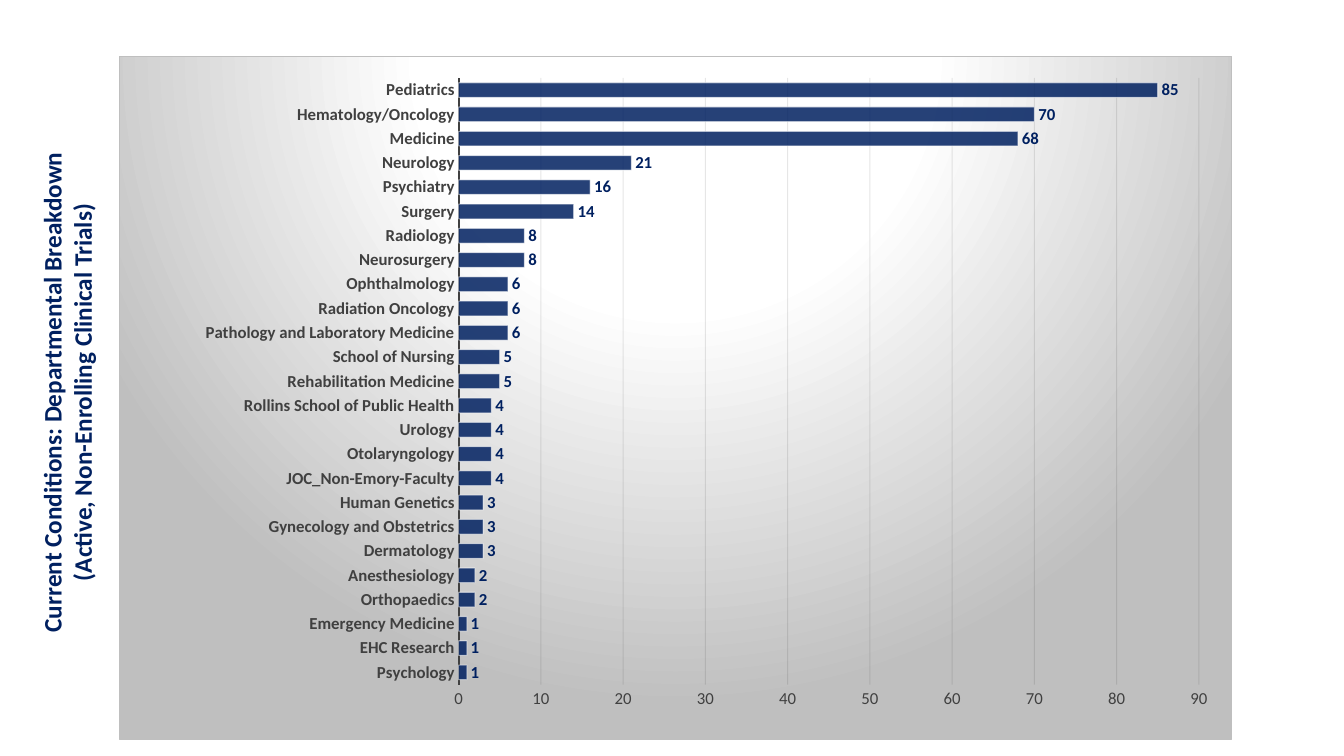
from lxml.etree import SubElement
from pptx import Presentation
from pptx.chart.data import CategoryChartData
from pptx.dml.color import RGBColor
from pptx.enum.chart import XL_CHART_TYPE, XL_LABEL_POSITION, XL_TICK_MARK
from pptx.enum.text import MSO_ANCHOR, MSO_AUTO_SIZE, PP_ALIGN
from pptx.oxml import parse_xml
from pptx.oxml.ns import nsdecls, qn
from pptx.util import Cm, Pt

NAVY = RGBColor(0x00, 0x20, 0x60)
GREY = RGBColor(0x40, 0x40, 0x40)
INK = RGBColor(0x0D, 0x0D, 0x0D)
WHITE = RGBColor(0xFF, 0xFF, 0xFF)
BLACK = RGBColor(0x00, 0x00, 0x00)
SILVER = RGBColor(0xBF, 0xBF, 0xBF)

TITLE = ("Current Conditions: Departmental Breakdown",
         "(Active, Non-Enrolling Clinical Trials)")
TRIALS = {
    "Psychology": 1, "EHC Research": 1, "Emergency Medicine": 1,
    "Orthopaedics": 2, "Anesthesiology": 2,
    "Dermatology": 3, "Gynecology and Obstetrics": 3, "Human Genetics": 3,
    "JOC_Non-Emory-Faculty": 4, "Otolaryngology": 4, "Urology": 4,
    "Rollins School of Public Health": 4,
    "Rehabilitation Medicine": 5, "School of Nursing": 5,
    "Pathology and Laboratory Medicine": 6, "Radiation Oncology": 6,
    "Ophthalmology": 6, "Neurosurgery": 8, "Radiology": 8, "Surgery": 14,
    "Psychiatry": 16, "Neurology": 21, "Medicine": 68,
    "Hematology/Oncology": 70, "Pediatrics": 85,
}


class Deck:
    face = "Calibri"

    def __init__(self):
        self.prs = Presentation()
        self.prs.slide_width, self.prs.slide_height = Cm(33.87), Cm(19.05)
        self.slide = self.prs.slides.add_slide(self.prs.slide_layouts[5])

    def style(self, font, size, color, bold=False):
        font.name, font.size, font.bold = self.face, Pt(size), bold
        font.color.rgb = color

    def title(self, lines, left, top, width, height):
        """Set the title so that it reads upwards along the left edge."""
        box = self.slide.shapes.title
        box.left, box.top, box.width, box.height = left, top, width, height
        box.rotation = 270
        frame = box.text_frame
        frame.word_wrap = True
        frame.auto_size = MSO_AUTO_SIZE.SHAPE_TO_FIT_TEXT
        frame.vertical_anchor = MSO_ANCHOR.TOP
        frame.text = "\n".join(lines)
        for para in frame.paragraphs:
            para.alignment = PP_ALIGN.CENTER
            self.style(para.font, 18, NAVY, True)

    def bars(self, counts, left, top, width, height):
        data = CategoryChartData()
        data.categories = list(counts)
        data.add_series("Series 1", list(counts.values()))
        chart = self.slide.shapes.add_chart(
            XL_CHART_TYPE.BAR_CLUSTERED, left, top, width, height, data).chart
        chart.has_title = chart.has_legend = False
        self.style(chart.font, 10, BLACK)
        self.axes(chart)
        plot = chart.plots[0]
        plot.gap_width, plot.vary_by_categories = 65, False
        plot.has_data_labels = True
        labels = plot.data_labels
        labels.show_value = True
        labels.position = XL_LABEL_POSITION.OUTSIDE_END
        self.style(labels.font, 12, NAVY, True)
        look = plot.series[0].format
        look.fill.solid()
        look.fill.fore_color.rgb = NAVY
        look.line.color.rgb, look.line.width = WHITE, Pt(0.75)
        self.fade(chart, "//c:ser/c:spPr/a:solidFill/a:srgbClr", 85)
        self.fade(chart, "//c:ser/c:spPr/a:ln//a:srgbClr", 50)
        self.fade(chart, "//c:majorGridlines//a:srgbClr", 10)
        self.place(chart, x=0.305, y=0.031, w=0.666, h=0.889)
        self.glow(chart)

    def axes(self, chart):
        cat, val = chart.category_axis, chart.value_axis
        for axis in (cat, val):
            axis.major_tick_mark = axis.minor_tick_mark = XL_TICK_MARK.NONE
            self.style(axis.tick_labels.font, 12, GREY, axis is cat)
        cat.format.line.color.rgb, cat.format.line.width = GREY, Pt(1.5)
        val.minimum_scale, val.maximum_scale, val.major_unit = 0, 90, 10
        val.format.line.fill.background()
        grid = val.major_gridlines.format.line
        grid.color.rgb, grid.width = INK, Pt(0.75)

    def fade(self, chart, query, alpha):
        """Set the opacity, in percent, of the colours that match."""
        for color in chart.element.xpath(query):
            SubElement(color, qn("a:alpha")).set("val", str(alpha * 1000))

    def place(self, chart, **sides):
        """Fix the inner plot area as fractions of the chart."""
        area = chart.element.xpath("//c:plotArea")[0]
        for old in area.findall(qn("c:layout")):
            area.remove(old)
        modes = "".join(f'<c:{s}Mode val="edge"/>' for s in "xy")
        spots = "".join(f'<c:{s} val="{v}"/>' for s, v in sides.items())
        area.insert(0, parse_xml(
            f'<c:layout {nsdecls("c")}><c:manualLayout>'
            f'<c:layoutTarget val="inner"/>{modes}{spots}'
            '</c:manualLayout></c:layout>'))

    def glow(self, chart):
        """Give the chart area a round gradient and a thin border."""
        stops = "".join(
            f'<a:gs pos="{pos * 1000}"><a:srgbClr val="{color}"/></a:gs>'
            for pos, color in ((0, WHITE), (39, WHITE), (100, SILVER)))
        chart.element.find(qn("c:chart")).addnext(parse_xml(
            f'<c:spPr {nsdecls("c", "a")}><a:gradFill>'
            f'<a:gsLst>{stops}</a:gsLst><a:path path="circle">'
            '<a:fillToRect l="50000" t="-80000" r="50000" b="180000"/>'
            '</a:path></a:gradFill><a:ln w="9525"><a:solidFill>'
            f'<a:srgbClr val="{SILVER}"/></a:solidFill></a:ln></c:spPr>'))

    def save(self):
        self.prs.save("out.pptx")


def main():
    deck = Deck()
    deck.bars(TRIALS, Cm(3), Cm(1.42), Cm(28.04), Cm(17.22))
    deck.title(TITLE, Cm(-6.78), Cm(8.99), Cm(16.94), Cm(1.8))
    deck.save()


if __name__ == "__main__":
    main()
